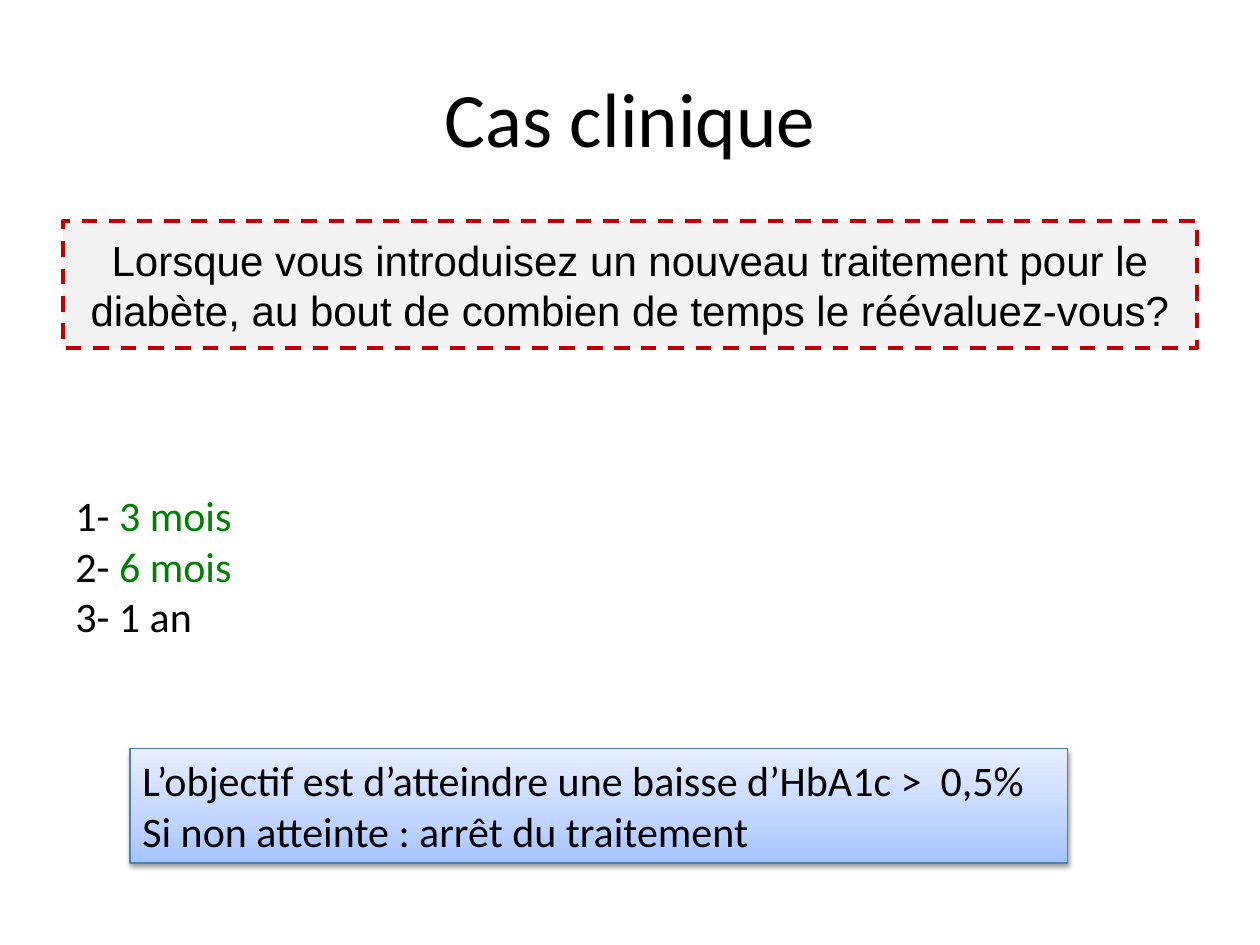
from copy import deepcopy

from pptx import Presentation
from pptx.dml.color import RGBColor
from pptx.enum.dml import MSO_LINE
from pptx.enum.shapes import MSO_SHAPE
from pptx.enum.text import MSO_ANCHOR, PP_ALIGN
from pptx.oxml import parse_xml
from pptx.oxml.ns import nsdecls, qn
from pptx.util import Cm, Pt

COLORS = {
    "text": "000000",
    "answer": "008000",
    "question_fill": "F2F2F2",
    "question_line": "C00000",
    "goal_line": "4B7EBC",
    "goal_bottom": "A4C4FF",
    "goal_middle": "BFD4FF",
    "goal_top": "E6EEFF",
}
LEFT, WIDTH = 1.27, 22.86


def rgb(name):
    return RGBColor.from_string(COLORS[name])


class Deck:
    def __init__(self, font="Calibri", size=24):
        self.font, self.size = font, size
        self.prs = Presentation()
        self.prs.slide_width, self.prs.slide_height = Cm(25.4), Cm(19.05)
        self.s = self.prs.slides.add_slide(self.prs.slide_layouts[5])

    def format_run(self, r, color="text", font=None, size=None):
        r.font.name = font or self.font
        r.font.size = Pt(size or self.size)
        r.font.color.rgb = rgb(color)

    def set_text(self, tf, lines, align=PP_ALIGN.LEFT, anchor=MSO_ANCHOR.TOP, **style):
        tf.word_wrap = True
        tf.vertical_anchor = anchor
        tf.text = "\n".join(lines)
        for p in tf.paragraphs:
            p.alignment = align
            for r in p.runs:
                self.format_run(r, **style)

    def title(self, text, x, y, w, h):
        sp = self.s.shapes.title
        sp.left, sp.top, sp.width, sp.height = Cm(x), Cm(y), Cm(w), Cm(h)
        self.set_text(sp.text_frame, [text], PP_ALIGN.CENTER, MSO_ANCHOR.MIDDLE, size=44)

    def rectangle(self, x, y, w, h, line, line_width):
        sp = self.s.shapes.add_shape(MSO_SHAPE.RECTANGLE, Cm(x), Cm(y), Cm(w), Cm(h))
        sp.shadow.inherit = False
        sp.line.color.rgb = rgb(line)
        sp.line.width = Pt(line_width)
        return sp

    def question(self, text, x, y, w, h):
        sp = self.rectangle(x, y, w, h, "question_line", 2.25)
        sp.line.dash_style = MSO_LINE.DASH
        sp.fill.solid()
        sp.fill.fore_color.rgb = rgb("question_fill")
        self.set_text(sp.text_frame, [text], PP_ALIGN.CENTER, MSO_ANCHOR.MIDDLE,
                      font="Arial")

    def choices(self, items, x, y, w, h):
        """Number the (text, colour) items, colouring only the text."""
        tf = self.s.shapes.add_textbox(Cm(x), Cm(y), Cm(w), Cm(h)).text_frame
        self.set_text(tf, [f"{n}- " for n in range(1, len(items) + 1)])
        for p, (text, color) in zip(tf.paragraphs, items):
            r = p.add_run()
            r.text = text
            self.format_run(r, color)

    def goal(self, lines, x, y, w, h):
        sp = self.rectangle(x, y, w, h, "goal_line", 0.75)
        self.gradient(sp, [(0, "goal_bottom"), (0.35, "goal_middle"), (1, "goal_top")])
        self.drop_shadow(sp)
        self.set_text(sp.text_frame, lines)

    def gradient(self, sp, stops):
        """Fill from bottom to top with three stops."""
        sp.fill.gradient()
        sp.fill.gradient_angle = 90
        first = next(sp._element.spPr.iter(qn("a:gs")))
        first.addnext(deepcopy(first))
        for stop, (position, color) in zip(sp.fill.gradient_stops, stops):
            stop.position = position
            stop.color.rgb = rgb(color)

    def drop_shadow(self, sp):
        sp._element.spPr.find(qn("a:effectLst")).append(parse_xml(
            f'<a:outerShdw {nsdecls("a")} blurRad="{Pt(3.1)}" dist="{Pt(1.6)}" '
            'dir="5400000" rotWithShape="0"><a:srgbClr val="000000">'
            '<a:alpha val="38000"/></a:srgbClr></a:outerShdw>'))


def main():
    deck = Deck()
    deck.title("Cas clinique", LEFT, 0.76, WIDTH, 3.18)
    deck.question("Lorsque vous introduisez un nouveau traitement pour le diabète, "
                  "au bout de combien de temps le réévaluez-vous?",
                  LEFT, 4.45, WIDTH, 2.57)
    deck.choices([("3 mois", "answer"), ("6 mois", "answer"), ("1 an", "text")],
                 LEFT, 9.75, WIDTH, 3.33)
    deck.goal(["L’objectif est d’atteindre une baisse d’HbA1c >  0,5%",
               "Si non atteinte : arrêt du traitement"],
              2.62, 15.09, 18.9, 2.31)
    deck.prs.save("out.pptx")


if __name__ == "__main__":
    main()
